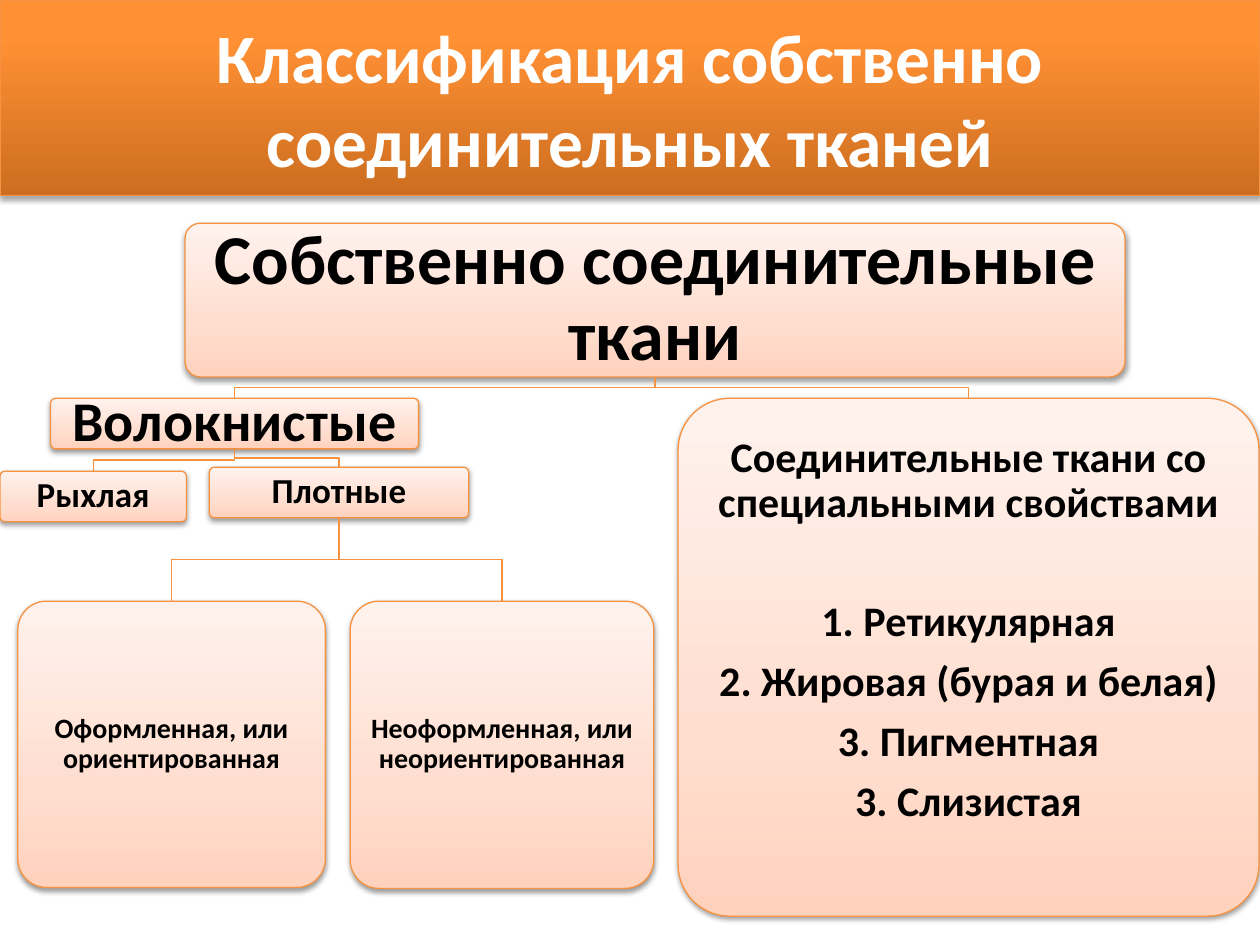
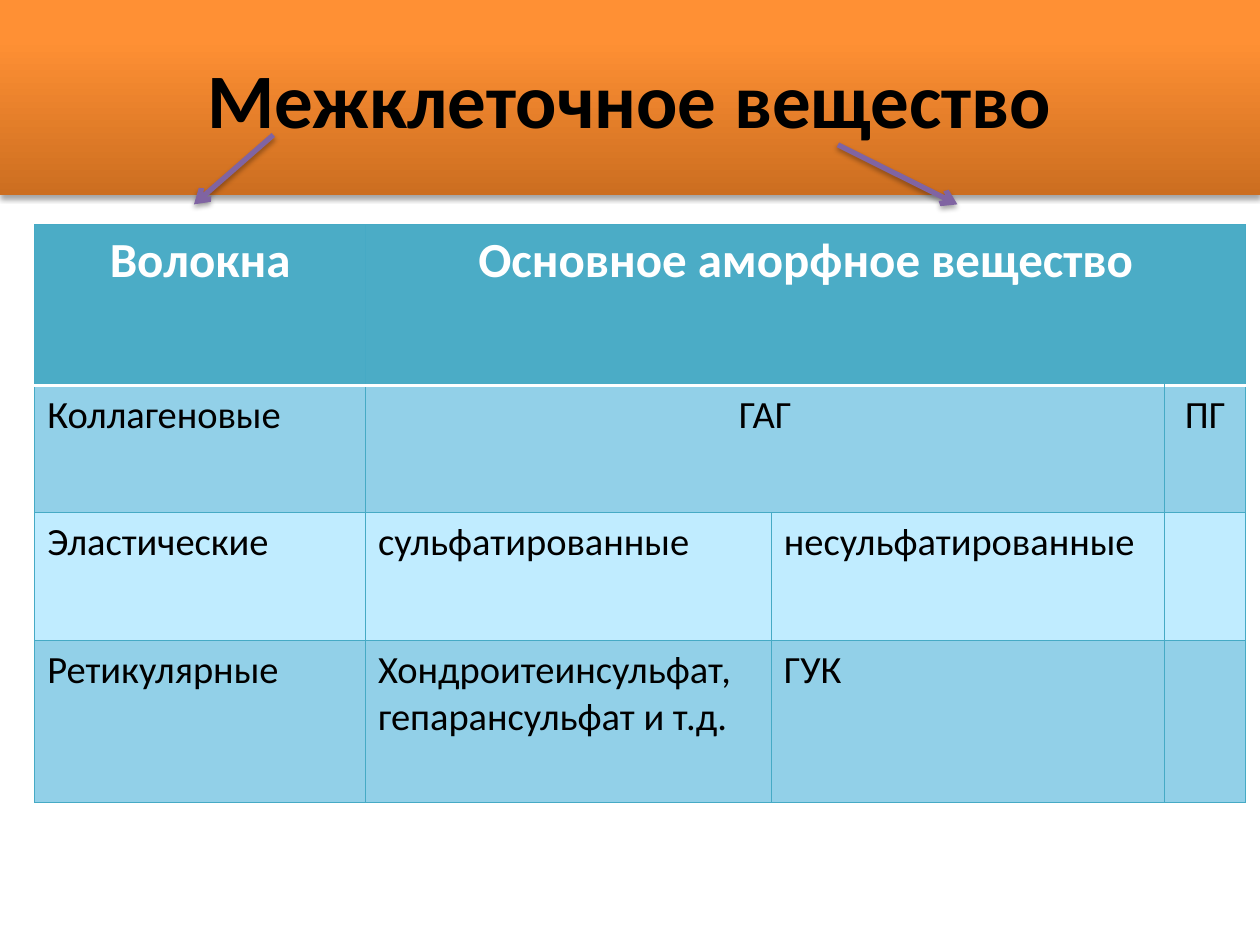
import dataclasses
import pptx
import pptx.util
import pptx.dml.color
import pptx.enum.shapes
import pptx.enum.text
import pptx.oxml
import pptx.oxml.ns
import copy
import lxml.etree

Cm = pptx.util.Cm
Pt = pptx.util.Pt
qn = pptx.oxml.ns.qn
Kind = pptx.enum.shapes.MSO_SHAPE
Join = pptx.enum.shapes.MSO_CONNECTOR
Align = pptx.enum.text.PP_ALIGN
Anchor = pptx.enum.text.MSO_ANCHOR


@dataclasses.dataclass(frozen=True)
class Theme:
    font: str = "Calibri"
    dark: str = "000000"
    light: str = "FFFFFF"
    edge: str = "F69240"
    arrow: str = "8064A2"
    head: str = "4BACC6"
    grid: str = "46AAC5"
    bands: tuple = ("92D0E8", "C0ECFF")
    band: tuple = ((0, "CC6E20"), (0.8, "FF9034"), (1, "FF9136"))
    box: tuple = ((0, "FFD2BD"), (0.35, "FFDED0"), (1, "FFF2ED"))
    thin: float = 0.75
    rule: float = 2
    bold: float = 3
    cell: int = 22
    top: int = 28


THEME = Theme()


def tint(code):
    return pptx.dml.color.RGBColor.from_string(code)


def style(para, size, color, bold=True, align=Align.CENTER):
    para.alignment = align
    font = para.font
    font.name, font.size, font.bold = THEME.font, Pt(size), bold
    font.color.rgb = tint(color)


def blend(shape, stops):
    shape.fill.gradient()
    shape.fill.gradient_angle = 90
    group = shape._element.spPr.find(".//" + qn("a:gsLst"))
    group.append(copy.deepcopy(group[-1]))
    for stop, (place, code) in zip(shape.fill.gradient_stops, stops):
        stop.position = place
        stop.color.rgb = tint(code)


def stroke(line, color, width):
    line.color.rgb = tint(color)
    line.width = Pt(width)


def shade(shape, alpha, drop):
    list_ = lxml.etree.SubElement(shape._element.spPr, qn("a:effectLst"))
    cast = lxml.etree.SubElement(
        list_, qn("a:outerShdw"), blurRad=str(Pt(3.1)), dist=str(Pt(drop)),
        dir="5400000", rotWithShape="0")
    color = lxml.etree.SubElement(cast, qn("a:srgbClr"), val=THEME.dark)
    lxml.etree.SubElement(color, qn("a:alpha"), val=str(alpha * 1000))


def start(deck, text, size, color, edge=False):
    slide = deck.slides.add_slide(deck.slide_layouts[5])
    title = slide.shapes.title
    title.left, title.top = Cm(0), Cm(0)
    title.width, title.height = deck.slide_width, Cm(3.94)
    blend(title, THEME.band)
    if edge:
        stroke(title.line, THEME.edge, THEME.thin)
    shade(title, 35, 1.8)
    title.text_frame.text = text
    title.text_frame.vertical_anchor = Anchor.MIDDLE
    style(title.text_frame.paragraphs[0], size, color)
    return slide


def add_box(slide, place, size, *lines):
    box = slide.shapes.add_shape(Kind.ROUNDED_RECTANGLE, *map(Cm, place))
    box.adjustments[0] = 0.1
    blend(box, THEME.box)
    stroke(box.line, THEME.edge, THEME.thin)
    shade(box, 38, 1.6)
    frame = box.text_frame
    frame.word_wrap = True
    frame.vertical_anchor = Anchor.MIDDLE
    frame.margin_left = frame.margin_right = Cm(0.17)
    frame.margin_top = frame.margin_bottom = Cm(0.17)
    frame.text = "\n".join(lines)
    for para in frame.paragraphs:
        style(para, size, THEME.dark)
        para.line_spacing = 0.9
        para.space_after = Pt(0.35 * size)
    return box


def link(slide, upper, lower):
    x, y = upper.left + upper.width // 2, upper.top + upper.height
    end = lower.left + lower.width // 2
    mid = (y + lower.top) // 2
    pen = slide.shapes.build_freeform(x, y)
    pen.add_line_segments([(x, mid), (end, mid), (end, lower.top)], close=False)
    path = pen.convert_to_shape()
    path.fill.background()
    path.shadow.inherit = False
    stroke(path.line, THEME.edge, THEME.thin)


def add_arrow(slide, *ends):
    arrow = slide.shapes.add_connector(Join.STRAIGHT, *map(Cm, ends))
    stroke(arrow.line, THEME.arrow, THEME.bold)
    lxml.etree.SubElement(arrow.line._get_or_add_ln(), qn("a:tailEnd"), type="arrow")
    shade(arrow, 35, 1.8)


def frame_cell(cell, rules):
    props = cell._tc.get_or_add_tcPr()
    for side in "LRTB":
        color, width = rules.get(side, (THEME.grid, THEME.thin))
        line = lxml.etree.SubElement(props, qn("a:ln" + side), w=str(Pt(width)))
        fill = lxml.etree.SubElement(line, qn("a:solidFill"))
        lxml.etree.SubElement(fill, qn("a:srgbClr"), val=color)


def add_grid(slide, place, widths, heights, rows, spans, mids):
    size = Cm(sum(widths)), Cm(sum(heights))
    grid = slide.shapes.add_table(
        len(rows), len(widths), *map(Cm, place), *size).table
    for col, width in zip(grid.columns, widths):
        col.width = Cm(width)
    white = (THEME.light, THEME.rule)
    for r, (row, height) in enumerate(zip(rows, heights)):
        grid.rows[r].height = Cm(height)
        rules = {0: {"B": white}, 1: {"T": white}}.get(r, {})
        for c, text in enumerate(row):
            cell = grid.cell(r, c)
            frame_cell(cell, rules)
            cell.fill.solid()
            back = THEME.bands[(r - 1) % 2] if r else THEME.head
            cell.fill.fore_color.rgb = tint(back)
            if text:
                cell.text = text
                align = Align.CENTER if r == 0 or (r, c) in mids else Align.LEFT
                size = THEME.cell if r else THEME.top
                color = THEME.dark if r else THEME.light
                style(cell.text_frame.paragraphs[0], size, color, r == 0, align)
    for r, first, last in spans:
        grid.cell(r, first).merge(grid.cell(r, last))


def draw_tree(deck):
    slide = start(deck, "Классификация собственно соединительных тканей",
                  39.6, THEME.light, True)
    root = add_box(slide, (3.73, 4.5, 18.95, 3.1), 40,
                   "Собственно соединительные ткани")
    fibrous = add_box(slide, (1.02, 8.03, 7.42, 1.02), 32, "Волокнистые")
    loose = add_box(slide, (0, 9.5, 3.76, 1.02), 20, "Рыхлая")
    dense = add_box(slide, (4.22, 9.42, 5.23, 1.02), 20, "Плотные")
    formed = add_box(slide, (0.36, 12.12, 6.2, 5.77), 16,
                     "Оформленная, или ориентированная")
    unformed = add_box(slide, (7.06, 12.12, 6.12, 5.79), 16,
                       "Неоформленная, или неориентированная")
    special = add_box(slide, (13.67, 8.03, 11.71, 10.44), 24,
                      "Соединительные ткани со специальными свойствами",
                      "1. Ретикулярная", "2. Жировая (бурая и белая)",
                      "3. Пигментная", "3. Слизистая")
    frame = special.text_frame
    frame.vertical_anchor = Anchor.TOP
    frame.margin_top = Cm(0.45)
    frame.paragraphs[0].space_after = Pt(42)
    for upper, lower in ((root, fibrous), (root, special), (fibrous, loose),
                         (fibrous, dense), (dense, formed), (dense, unformed)):
        link(slide, upper, lower)


def draw_matter(deck):
    slide = start(deck, "Межклеточное вещество", 44, THEME.dark)
    rows = (
        ("Волокна", "Основное аморфное вещество", "", ""),
        ("Коллагеновые", "ГАГ", "", "ПГ"),
        ("Эластические", "сульфатированные", "несульфатированные", ""),
        ("Ретикулярные", "Хондроитеинсульфат, гепарансульфат и т.д.", "ГУК", ""),
    )
    add_grid(slide, (0.7, 4.53), (6.67, 8.18, 7.93, 1.63),
             (3.24, 2.57, 2.57, 3.27), rows,
             ((0, 1, 3), (1, 1, 2)), ((1, 1), (1, 3)))
    add_arrow(slide, 5.51, 2.72, 3.91, 4.12)
    add_arrow(slide, 16.89, 2.92, 19.3, 4.12)


def main():
    deck = pptx.Presentation()
    deck.slide_width, deck.slide_height = Cm(25.4), Cm(19.05)
    draw_tree(deck)
    draw_matter(deck)
    deck.save("out.pptx")


if __name__ == "__main__":
    main()
